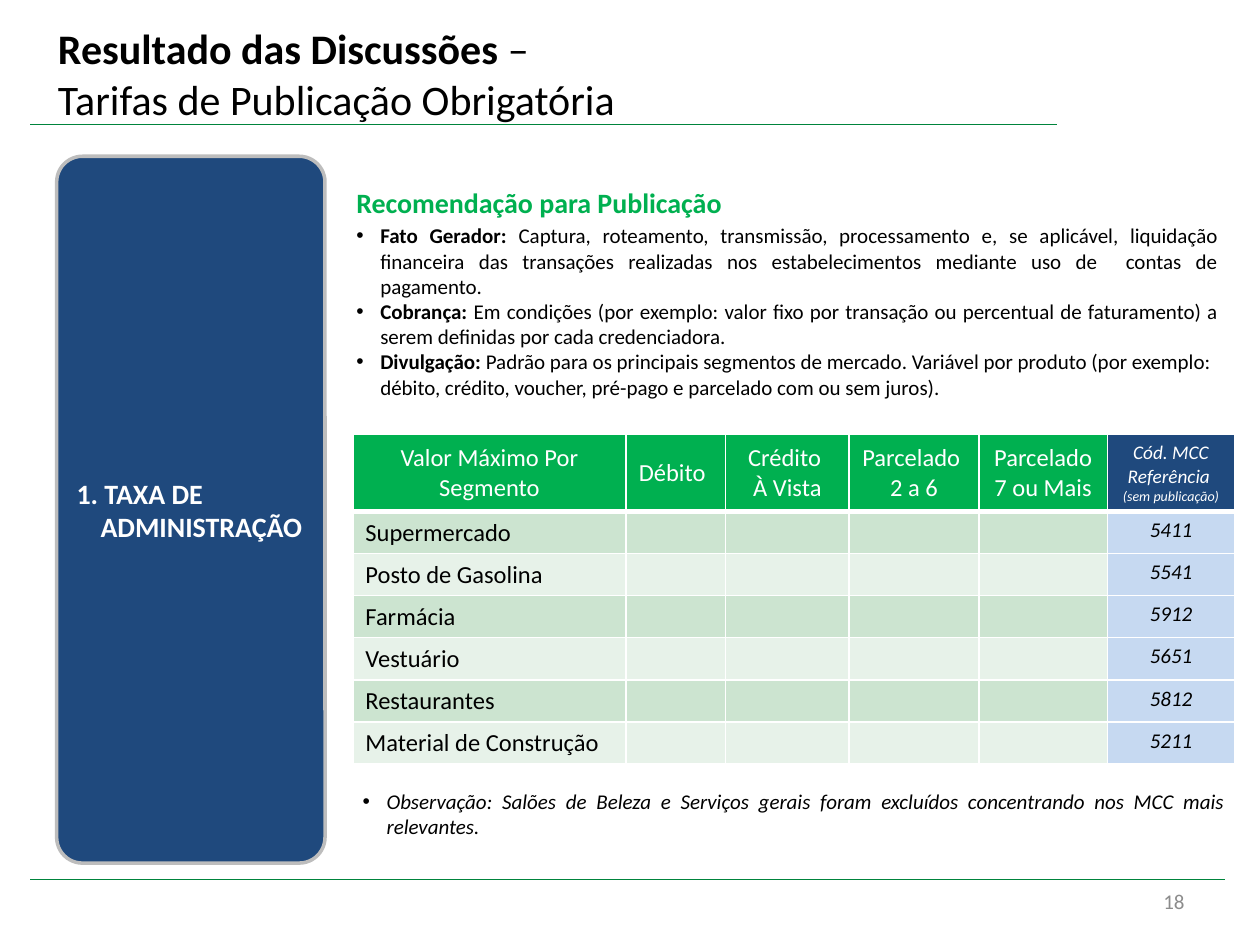
from lxml.etree import SubElement
from pptx import Presentation
from pptx.dml.color import RGBColor
from pptx.enum.shapes import MSO_CONNECTOR as Connector, MSO_SHAPE as Shape
from pptx.enum.text import MSO_ANCHOR as Anchor, MSO_AUTO_SIZE as AutoSize, PP_ALIGN as Align
from pptx.oxml.ns import qn
from pptx.util import Inches, Pt

GREEN, NAVY, WHITE, BLACK = "00B050", "1F497D", "FFFFFF", "000000"
BANDS = ("CCE4D0", "E7F2E9")
CODE_FILL = "C6D9F1"
HANGING = 0.19


def rgb(value):
    return RGBColor.from_string(value)


class SlideBuilder:
    """Holds the slide being built and its base text style."""

    base = {"name": "Calibri", "size": 12, "bold": False, "italic": False, "color": BLACK}

    def __init__(self, slide):
        self.slide = slide
        self.shapes = slide.shapes

    def format_font(self, font, style):
        for key, value in {**self.base, **style}.items():
            if key == "color":
                font.color.rgb = rgb(value)
            else:
                setattr(font, key, Pt(value) if key == "size" else value)

    def fill_text(self, frame, paragraphs, align=Align.LEFT, bullet=False, hanging=False, **style):
        """Fill a frame; each paragraph is a list of (text, style) runs."""
        for index, runs in enumerate(paragraphs):
            paragraph = frame.paragraphs[0] if index == 0 else frame.add_paragraph()
            paragraph.alignment = align
            if bullet or hanging:
                self.hang(paragraph, bullet)
            for text, changes in runs:
                for part, line in enumerate(text.split("\n")):
                    if part:
                        paragraph.add_line_break()
                    run = paragraph.add_run()
                    run.text = line
                    self.format_font(run.font, {**style, **changes})

    def hang(self, paragraph, bullet):
        properties = paragraph._p.get_or_add_pPr()
        properties.set("marL", str(Inches(HANGING)))
        properties.set("indent", str(-Inches(HANGING)))
        if bullet:
            SubElement(properties, qn("a:buFont")).set("typeface", "Arial")
            SubElement(properties, qn("a:buChar")).set("char", "•")

    def text(self, box, paragraphs, anchor=Anchor.TOP, inset=None, grow=False, **style):
        frame = self.shapes.add_textbox(*map(Inches, box)).text_frame
        frame.word_wrap = True
        frame.vertical_anchor = anchor
        frame.auto_size = AutoSize.SHAPE_TO_FIT_TEXT if grow else AutoSize.NONE
        if inset is not None:
            for side in ("left", "top", "right", "bottom"):
                setattr(frame, f"margin_{side}", Inches(inset))
        self.fill_text(frame, paragraphs, **style)
        return frame

    def rule(self, left, right, y):
        line = self.shapes.add_connector(
            Connector.STRAIGHT, Inches(left), Inches(y), Inches(right), Inches(y))
        line.line.color.rgb = rgb("00843C")
        line.line.width = Pt(0.75)
        SubElement(line._element.spPr, qn("a:effectLst"))

    def panel(self, box, paragraphs, **style):
        panel = self.shapes.add_shape(Shape.ROUNDED_RECTANGLE, *map(Inches, box))
        panel.adjustments[0] = 0.096
        panel.shadow.inherit = False
        panel.fill.solid()
        panel.fill.fore_color.rgb = rgb(NAVY)
        panel.line.color.rgb = rgb("BDBDBD")
        panel.line.width = Pt(2)
        panel.text_frame.word_wrap = True
        panel.text_frame.vertical_anchor = Anchor.MIDDLE
        self.fill_text(panel.text_frame, paragraphs, **style)

    def table(self, left, top, widths, heights):
        frame = self.shapes.add_table(
            len(heights), len(widths), Inches(left), Inches(top),
            Inches(sum(widths)), Inches(sum(heights)))
        table = frame.table
        table.first_row = table.horz_banding = False
        for column, width in zip(table.columns, widths):
            column.width = Inches(width)
        for row, height in zip(table.rows, heights):
            row.height = Inches(height)
        return table

    def cell(self, cell, fill, paragraphs=(), anchor=Anchor.TOP, bottom=1, **style):
        cell.vertical_anchor = anchor
        properties = cell._tc.get_or_add_tcPr()
        for edge, width in (("L", 1), ("R", 1), ("T", 1), ("B", bottom)):
            border = SubElement(properties, qn(f"a:ln{edge}"), w=str(Pt(width)))
            SubElement(SubElement(border, qn("a:solidFill")), qn("a:srgbClr"), val=WHITE)
        cell.fill.solid()
        cell.fill.fore_color.rgb = rgb(fill)
        self.fill_text(cell.text_frame, paragraphs, **style)
        if not paragraphs:
            SubElement(cell.text_frame.paragraphs[0]._p, qn("a:endParaRPr"), sz="1200")


def plain(*lines):
    return [[(line, {})] for line in lines]


def labelled(label, text):
    return [(label, {"bold": True}), (text, {})]


def add_rate_table(builder):
    headers = [
        plain("Valor Máximo Por Segmento"),
        plain("Débito"),
        plain("Crédito ", "À Vista"),
        plain("Parcelado ", "2 a 6"),
        plain("Parcelado ", "7 ou Mais"),
        [[("Cód. MCC Referência  ", {"size": 11, "italic": True}),
          ("(sem publicação)", {"size": 8, "italic": True})]],
    ]
    segments = {
        "Supermercado": "5411",
        "Posto de Gasolina": "5541",
        "Farmácia": "5912",
        "Vestuário": "5651",
        "Restaurantes": "5812",
        "Material de Construção": "5211",
    }
    widths = [2.17, 0.79, 0.98, 1.03, 1.02, 1.01]
    rates = builder.table(2.8, 3.45, widths, [0.61] + [0.32] * len(segments))
    code_column = len(headers) - 1
    for column, header in enumerate(headers):
        builder.cell(rates.cell(0, column), NAVY if column == code_column else GREEN, header,
                     anchor=Anchor.MIDDLE, bottom=3, size=14, color=WHITE,
                     align=Align.LEFT if column == 1 else Align.CENTER)
    for row, (segment, code) in enumerate(segments.items(), start=1):
        band = BANDS[(row - 1) % 2]
        builder.cell(rates.cell(row, 0), band, plain(segment), size=14)
        for column in range(1, code_column):
            builder.cell(rates.cell(row, column), band)
        builder.cell(rates.cell(row, code_column), CODE_FILL, plain(code),
                     align=Align.CENTER, italic=True)


def main():
    deck = Presentation()
    deck.slide_width, deck.slide_height = Inches(10), Inches(7.5)
    builder = SlideBuilder(deck.slides.add_slide(deck.slide_layouts[6]))

    builder.rule(0.24, 8.39, 0.99)
    builder.text((7.17, 6.95, 2.33, 0.4), plain("18"), anchor=Anchor.MIDDLE,
                 align=Align.RIGHT, color="8C8C8C")
    builder.rule(0.24, 9.72, 6.98)
    builder.panel((0.45, 1.24, 2.13, 5.61), plain("1. TAXA DE ADMINISTRAÇÃO"),
                  hanging=True, size=16, bold=True, color=WHITE)
    builder.text((2.73, 1.42, 7.14, 0.37), plain("Recomendação para Publicação"),
                 grow=True, size=16, bold=True, color=GREEN)
    builder.text((0.42, 0.29, 7.91, 0.58),
                 [labelled("Resultado das Discussões ", "–\nTarifas de Publicação Obrigatória")],
                 anchor=Anchor.MIDDLE, inset=0.04, size=24)
    add_rate_table(builder)
    recommendations = builder.text((2.73, 1.72, 7.04, 1.51), [
        labelled("Fato Gerador: ",
                 "Captura, roteamento, transmissão, processamento e, se aplicável, liquidação "
                 "financeira das transações realizadas nos estabelecimentos mediante uso de  "
                 "contas de pagamento."),
        labelled("Cobrança: ",
                 "Em condições (por exemplo: valor fixo por transação ou percentual de "
                 "faturamento) a serem definidas por cada credenciadora."),
        labelled("Divulgação: ",
                 "Padrão para os principais segmentos de mercado. Variável por produto (por "
                 "exemplo: débito, crédito, voucher, pré-pago e parcelado com ou sem juros)."),
    ], grow=True, bullet=True, align=Align.JUSTIFY)
    recommendations.paragraphs[-1].alignment = Align.LEFT
    builder.text((2.78, 6.21, 7.04, 0.5),
                 plain("Observação: Salões de Beleza e Serviços gerais foram excluídos "
                       "concentrando nos MCC mais relevantes."),
                 grow=True, bullet=True, align=Align.JUSTIFY, italic=True)

    deck.save("out.pptx")


if __name__ == "__main__":
    main()
